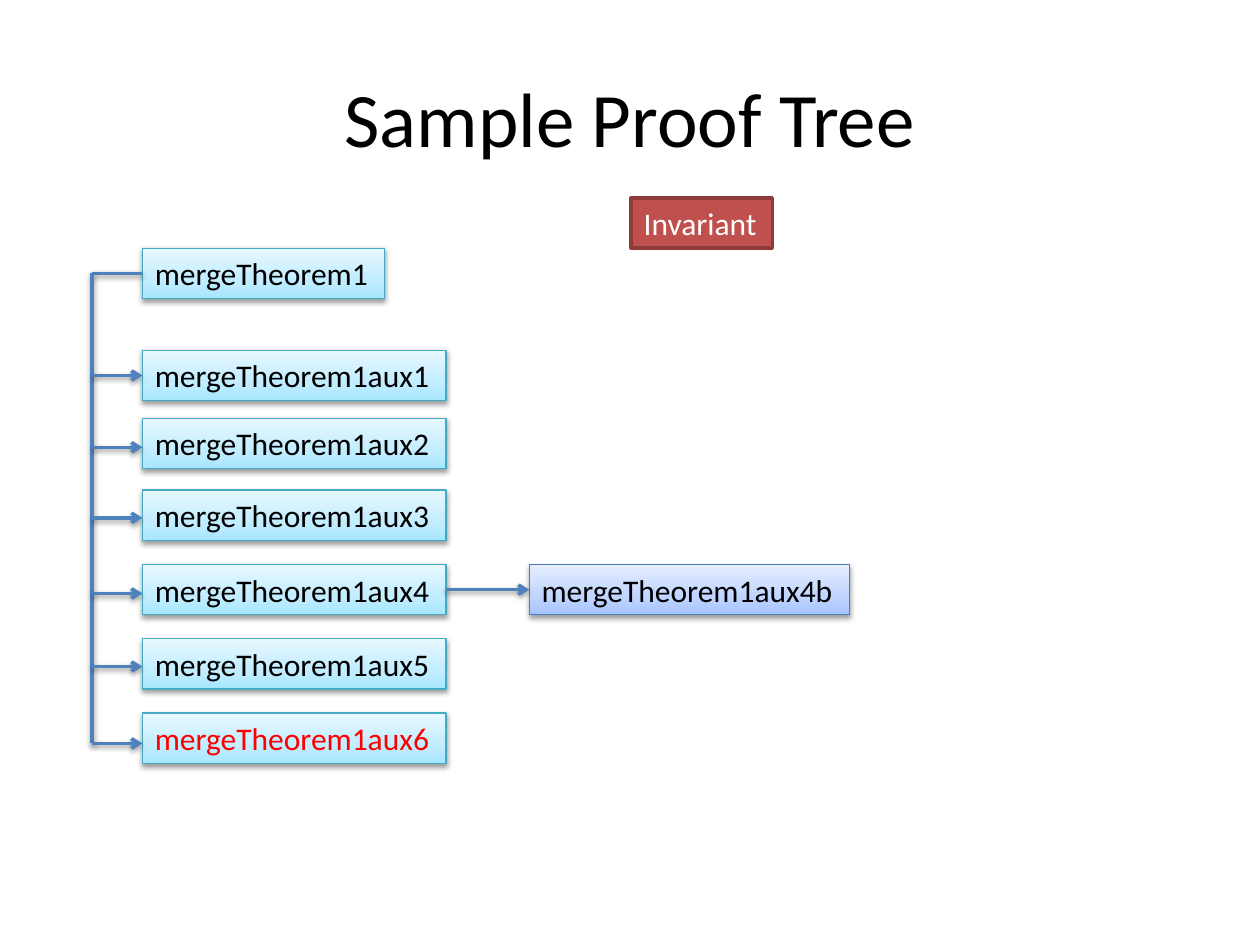
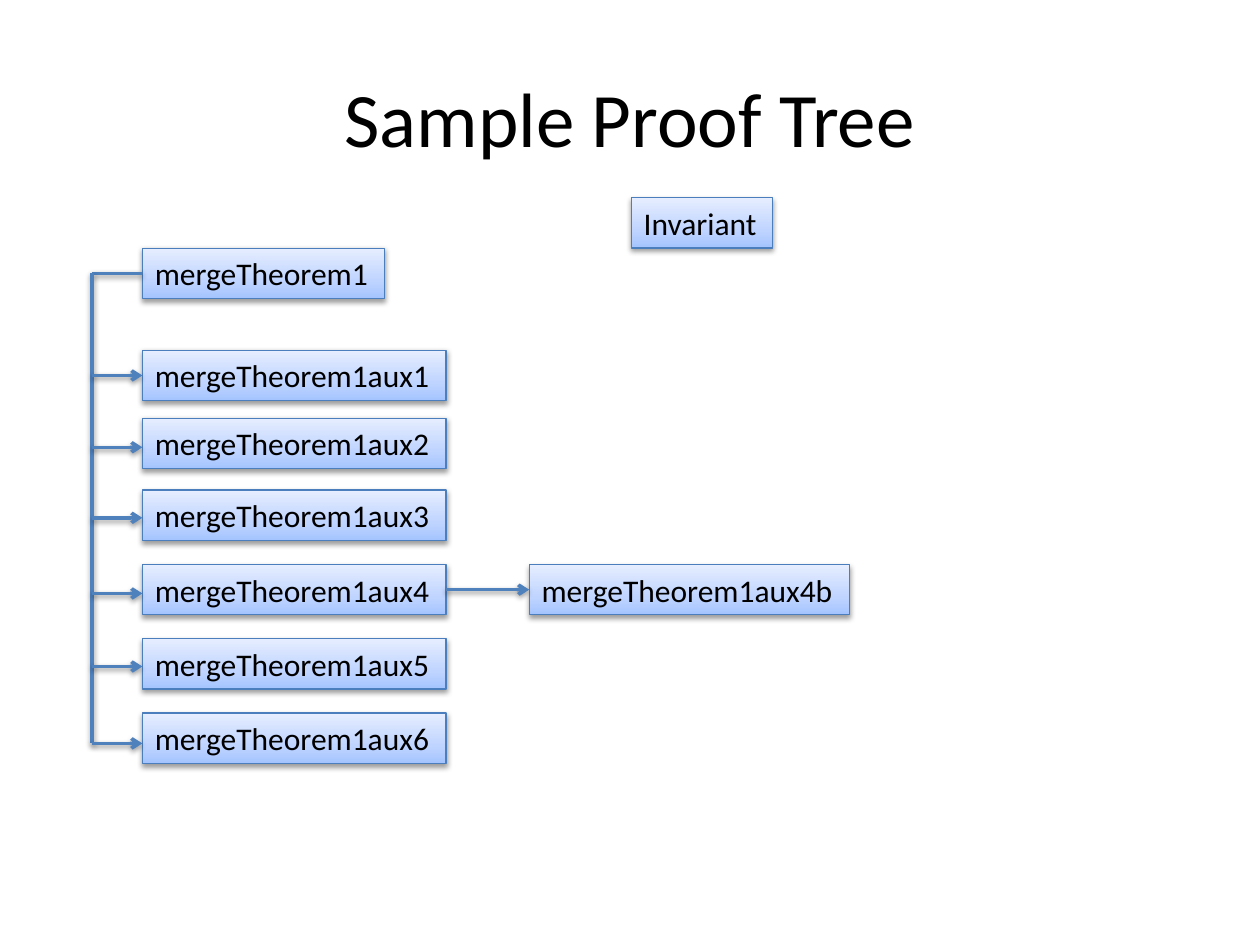
from copy import deepcopy
from pptx import Presentation
from pptx.dml.color import RGBColor
from pptx.enum.shapes import MSO_CONNECTOR as Link, MSO_SHAPE as Shape
from pptx.enum.text import MSO_ANCHOR as Anchor, MSO_AUTO_SIZE as Fit, PP_ALIGN as Align
from pptx.oxml import parse_xml
from pptx.oxml.ns import nsdecls, qn
from pptx.util import Inches, Pt

TITLE = "Sample Proof Tree"
FONT = "Calibri"
BLACK, WHITE, RED, BLUE = "000000", "FFFFFF", "FF0000", "4F81BD"

STYLES = {
    "aqua": dict(stops=["A7E6FF", "C1EDFF", "E7F8FF"], edge="46AAC5", width=0.75),
    "blue": dict(stops=["A4C4FF", "BFD4FF", "E6EEFF"], edge="4B7EBC", width=0.75),
    "red": dict(stops=["C0504D"], edge="8E3B39", width=2),
}

SLIDES = [
    dict(tree="aqua", side="blue", mark="red", mark_ink=WHITE, last_ink=RED),
    dict(tree="blue", side="blue", mark="blue", mark_ink=BLACK, last_ink=BLACK),
]

AUX = [
    ("mergeTheorem1aux1", 2.78, 2.98),
    ("mergeTheorem1aux2", 3.32, 3.55),
    ("mergeTheorem1aux3", 3.89, 4.11),
    ("mergeTheorem1aux4", 4.48, 4.71),
    ("mergeTheorem1aux5", 5.07, 5.29),
    ("mergeTheorem1aux6", 5.66, 5.9),
]
ROOT_TOP, MARK_TOP, SIDE_TOP = 1.97, 1.57, 4.48
SPINE, LEFT, SIDE, MARK = 0.73, 1.13, 4.2, 5.01
ROOT_W, AUX_W, SIDE_W, MARK_W = 1.92, 2.41, 2.54, 1.12
HIGH = 0.4


def tint(code):
    return RGBColor.from_string(code)


def shade(part):
    part._element.spPr.append(parse_xml(
        f'<a:effectLst {nsdecls("a")}>'
        f'<a:outerShdw blurRad="{Pt(3.1)}" dist="{Pt(1.6)}" dir="5400000" rotWithShape="0">'
        '<a:srgbClr val="000000"><a:alpha val="38000"/></a:srgbClr>'
        '</a:outerShdw></a:effectLst>'))


def blend(box, codes):
    box.fill.gradient()
    box.fill.gradient_angle = 90
    stops = box._element.spPr.find(".//" + qn("a:gsLst"))
    stops.append(deepcopy(stops[-1]))
    for stop, code, place in zip(box.fill.gradient_stops, codes, (0, 0.35, 1)):
        stop.color.rgb = tint(code)
        stop.position = place


def style(font, size, ink):
    font.name, font.size = FONT, Pt(size)
    font.color.rgb = tint(ink)


def add_box(slide, text, left, top, width, look, ink=BLACK):
    box = slide.shapes.add_shape(
        Shape.RECTANGLE, Inches(left), Inches(top), Inches(width), Inches(HIGH))
    kind = STYLES[look]
    box.line.color.rgb = tint(kind["edge"])
    box.line.width = Pt(kind["width"])
    if len(kind["stops"]) > 1:
        blend(box, kind["stops"])
        shade(box)
    else:
        box.fill.solid()
        box.fill.fore_color.rgb = tint(kind["stops"][0])
        box.shadow.inherit = False
    frame = box.text_frame
    frame.text = text
    frame.word_wrap = False
    frame.auto_size = Fit.SHAPE_TO_FIT_TEXT
    frame.vertical_anchor = Anchor.TOP
    para = frame.paragraphs[0]
    para.alignment = Align.LEFT
    style(para.runs[0].font, 18, ink)


def add_line(slide, x1, y1, x2, y2, arrow=False):
    line = slide.shapes.add_connector(
        Link.STRAIGHT, Inches(x1), Inches(y1), Inches(x2), Inches(y2))
    line.line.color.rgb = tint(BLUE)
    line.line.width = Pt(2)
    if arrow:
        line.line._get_or_add_ln().append(
            parse_xml(f'<a:tailEnd {nsdecls("a")} type="arrow"/>'))
    shade(line)


def add_title(slide):
    title = slide.shapes.title
    title.left, title.top = Inches(0.5), Inches(0.3)
    title.width, title.height = Inches(9), Inches(1.25)
    title.text_frame.text = TITLE
    title.text_frame.vertical_anchor = Anchor.MIDDLE
    para = title.text_frame.paragraphs[0]
    para.alignment = Align.CENTER
    style(para.runs[0].font, 44, BLACK)


def add_tree(deck, plan):
    slide = deck.slides.add_slide(deck.slide_layouts[5])
    add_title(slide)
    add_box(slide, "mergeTheorem1", LEFT, ROOT_TOP, ROOT_W, plan["tree"])
    for name, top, _ in AUX:
        ink = plan["last_ink"] if name == AUX[-1][0] else BLACK
        add_box(slide, name, LEFT, top, AUX_W, plan["tree"], ink)
    start = ROOT_TOP + HIGH / 2
    add_line(slide, LEFT, start, SPINE, start)
    add_line(slide, SPINE, start, SPINE, AUX[-1][2])
    for _, _, mid in AUX:
        add_line(slide, SPINE, mid, LEFT, mid, arrow=True)
    add_box(slide, "Invariant", MARK, MARK_TOP, MARK_W, plan["mark"], plan["mark_ink"])
    add_box(slide, "mergeTheorem1aux4b", SIDE, SIDE_TOP, SIDE_W, plan["side"])
    mid = SIDE_TOP + HIGH / 2
    add_line(slide, LEFT + AUX_W, mid, SIDE, mid, arrow=True)


def main():
    deck = Presentation()
    deck.slide_width, deck.slide_height = Inches(10), Inches(7.5)
    for plan in SLIDES:
        add_tree(deck, plan)
    deck.save("out.pptx")


if __name__ == "__main__":
    main()
